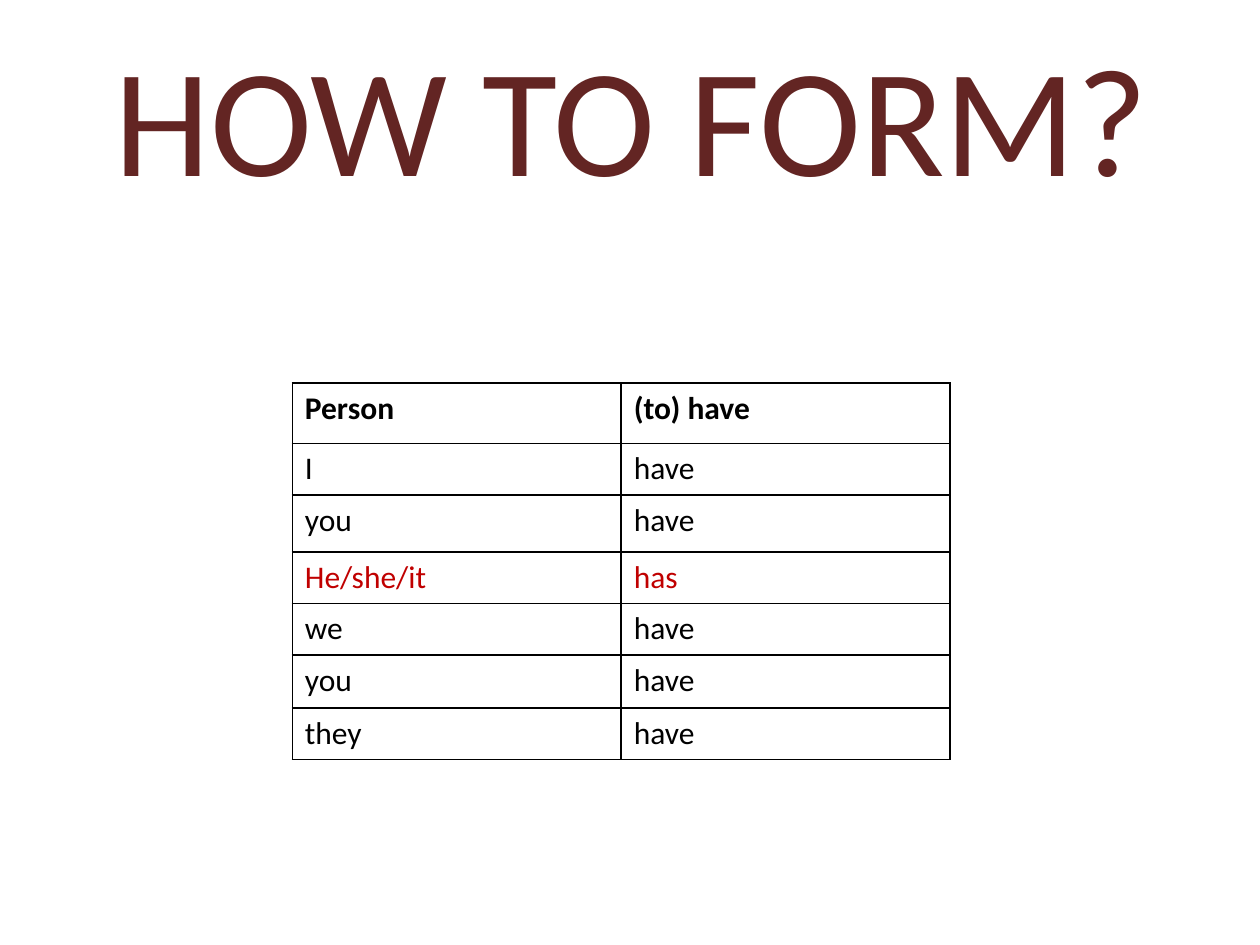
from dataclasses import dataclass

from lxml import etree
from pptx import Presentation, util as u
from pptx.dml.color import RGBColor
from pptx.enum import text
from pptx.oxml import ns

COLOURS = {"title": "632523", "body": "000000", "accent": "C00000",
           "paper": "FFFFFF", "border": "000000"}
FONT = "Calibri"


@dataclass
class Row:
    person: str
    verb: str
    height: float = 0.41
    colour: str = "body"
    bold: bool = False


CONJUGATION = [
    Row("Person", "(to) have", height=0.48, bold=True),
    Row("I", "have"),
    Row("you", "have", height=0.45),
    Row("He/she/it", "has", colour="accent"),
    Row("we", "have"),
    Row("you", "have", height=0.42),
    Row("they", "have"),
]


def write(frame, words: str, *, size: float, colour: str = "body",
          bold: bool = False, align=text.PP_ALIGN.LEFT) -> None:
    """Put one formatted paragraph into a text frame."""
    paragraph = frame.paragraphs[0]
    paragraph.alignment = align
    run = paragraph.add_run()
    run.text = words
    run.font.name = FONT
    run.font.size = u.Pt(size)
    run.font.bold = bold
    run.font.color.rgb = RGBColor.from_string(COLOURS[colour])


def style_cell(cell) -> None:
    """Give a cell its paper fill and a thin border on every side."""
    cell.fill.solid()
    cell.fill.fore_color.rgb = RGBColor.from_string(COLOURS["paper"])
    properties = cell._tc.get_or_add_tcPr()
    for position, side in enumerate(("lnL", "lnR", "lnT", "lnB")):
        line = etree.Element(ns.qn(f"a:{side}"), w=str(u.Pt(1)))
        fill = etree.SubElement(line, ns.qn("a:solidFill"))
        etree.SubElement(fill, ns.qn("a:srgbClr"), val=COLOURS["border"])
        properties.insert(position, line)


def draw_title(slide) -> None:
    """Draw the heading."""
    heading = slide.shapes.add_textbox(
        u.Inches(0.77), u.Inches(0.13), u.Inches(8.48), u.Inches(1.58))
    frame = heading.text_frame
    frame.word_wrap = False
    frame.auto_size = text.MSO_AUTO_SIZE.SHAPE_TO_FIT_TEXT
    write(frame, "HOW TO FORM?", size=88, colour="title", align=text.PP_ALIGN.CENTER)


def draw_conjugation(slide, rows: list[Row]) -> None:
    """Draw the table of verb forms."""
    table = slide.shapes.add_table(
        len(rows), 2, u.Inches(2.32), u.Inches(3.04), u.Inches(5.22),
        u.Inches(sum(row.height for row in rows))).table
    table.horz_banding = False
    for index, row in enumerate(rows):
        table.rows[index].height = u.Inches(row.height)
        for column, words in enumerate((row.person, row.verb)):
            cell = table.cell(index, column)
            style_cell(cell)
            write(cell.text_frame, words, size=18, colour=row.colour, bold=row.bold)


def main() -> None:
    """Build and save the slide."""
    deck = Presentation()
    deck.slide_width, deck.slide_height = u.Inches(10), u.Inches(7.5)
    slide = deck.slides.add_slide(deck.slide_layouts[6])
    draw_title(slide)
    draw_conjugation(slide, CONJUGATION)
    deck.save("out.pptx")


if __name__ == "__main__":
    main()
